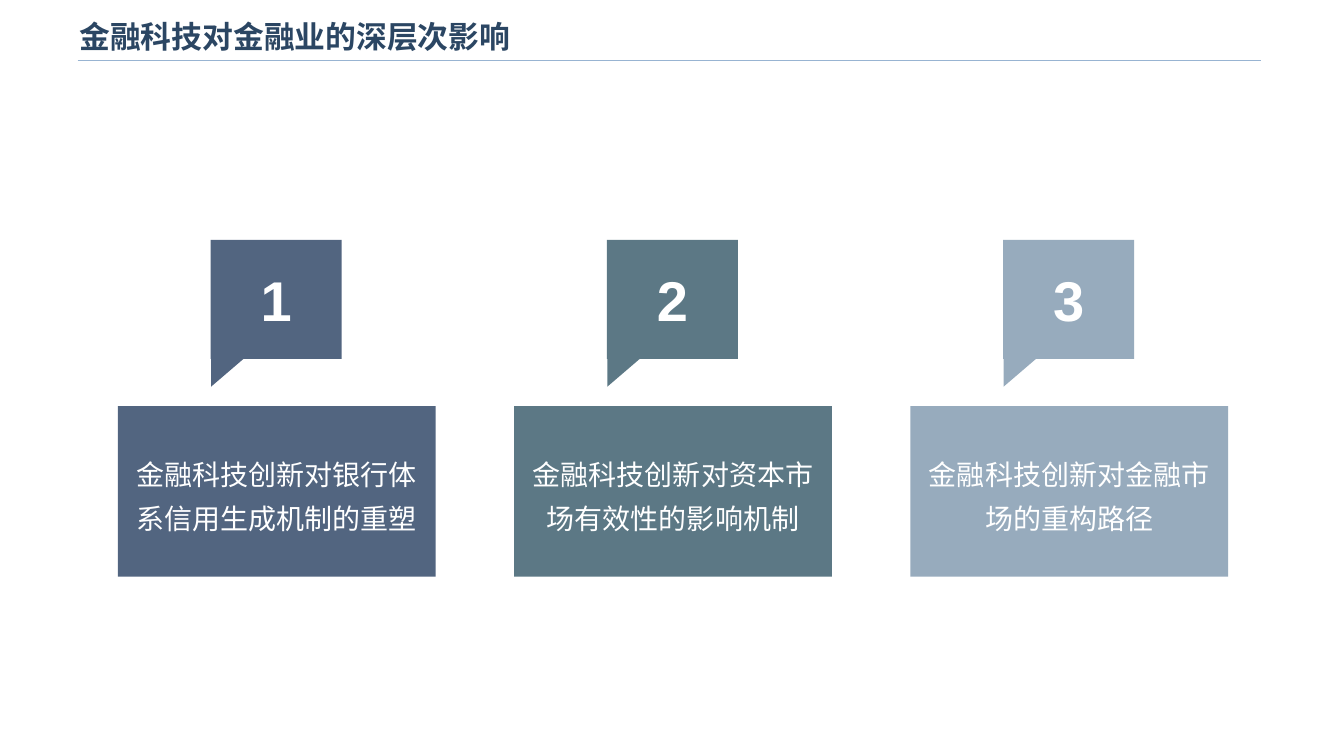
from pptx import Presentation
from pptx.dml.color import RGBColor
from pptx.enum.shapes import MSO_CONNECTOR, MSO_SHAPE
from pptx.enum.text import MSO_ANCHOR, PP_ALIGN
from pptx.oxml.ns import qn
from pptx.util import Inches, Pt
from lxml.etree import SubElement

COLORS = {"title": "2B4663", "rule": "98B4D2", "white": "FFFFFF",
          "navy": "526580", "teal": "5C7885", "mist": "97ABBD"}
TOPICS = [("navy", "金融科技创新对银行体系信用生成机制的重塑"),
          ("teal", "金融科技创新对资本市场有效性的影响机制"),
          ("mist", "金融科技创新对金融市场的重构路径")]
LEFT, PITCH = 1.17, 3.93


class Deck:
    font = "Arial"

    def __init__(self):
        self.prs = Presentation()
        self.prs.slide_width = Inches(13.33)
        self.prs.slide_height = Inches(7.5)
        self.slide = self.prs.slides.add_slide(self.prs.slide_layouts[6])

    def color(self, name):
        return RGBColor.from_string(COLORS[name])

    def label(self, shape, text, size, color, bold=False, align=None, space=None):
        frame = shape.text_frame
        frame.word_wrap = True
        frame.vertical_anchor = MSO_ANCHOR.MIDDLE
        frame.text = text
        para = frame.paragraphs[0]
        para.alignment = align
        para.line_spacing = space
        font = para.runs[0].font
        font.name, font.size, font.bold = self.font, Pt(size), bold
        font.color.rgb = self.color(color)

    def title(self, text, *box):
        shape = self.slide.shapes.add_textbox(*map(Inches, box))
        self.label(shape, text, 22, "title", bold=True)

    def rule(self, left, right, top):
        line = self.slide.shapes.add_connector(
            MSO_CONNECTOR.STRAIGHT, Inches(left), Inches(top), Inches(right), Inches(top))
        line.line.color.rgb = self.color("rule")
        line.line.width = Pt(1)
        SubElement(line._element.spPr, qn("a:effectLst"))

    def block(self, home, kind, color, *box):
        """Add a flat, borderless shape to a slide or group."""
        shape = home.shapes.add_shape(kind, *map(Inches, box))
        shape.shadow.inherit = False
        shape.fill.solid()
        shape.fill.fore_color.rgb = self.color(color)
        shape.line.fill.background()
        return shape

    def badge(self, number, color, left, top):
        """Add a numbered speech bubble, its tail at the lower left."""
        group = self.slide.shapes.add_group_shape()
        tail = self.block(group, MSO_SHAPE.ISOSCELES_TRIANGLE, color,
                          left + 0.03, top + 1.13, 0.3, 0.35)
        tail.adjustments[0] = 0
        tail.rotation = 90
        body = self.block(group, MSO_SHAPE.RECTANGLE, color, left, top, 1.3, 1.18)
        self.label(body, number, 40, "white", bold=True, align=PP_ALIGN.CENTER)

    def card(self, text, color, left, top):
        shape = self.block(self.slide, MSO_SHAPE.RECTANGLE, color, left, top, 3.15, 1.69)
        self.label(shape, text, 20, "white", align=PP_ALIGN.CENTER, space=1.3)


def main():
    deck = Deck()
    deck.rule(0.77, 12.51, 0.6)
    deck.title("金融科技对金融业的深层次影响", 0.69, 0.09, 10.71, 0.53)
    for i, (color, text) in enumerate(TOPICS):
        left = LEFT + i * PITCH
        deck.badge(str(i + 1), color, left + 0.92, 2.38)
        deck.card(text, color, left, 4.03)
    deck.prs.save("out.pptx")


if __name__ == "__main__":
    main()
